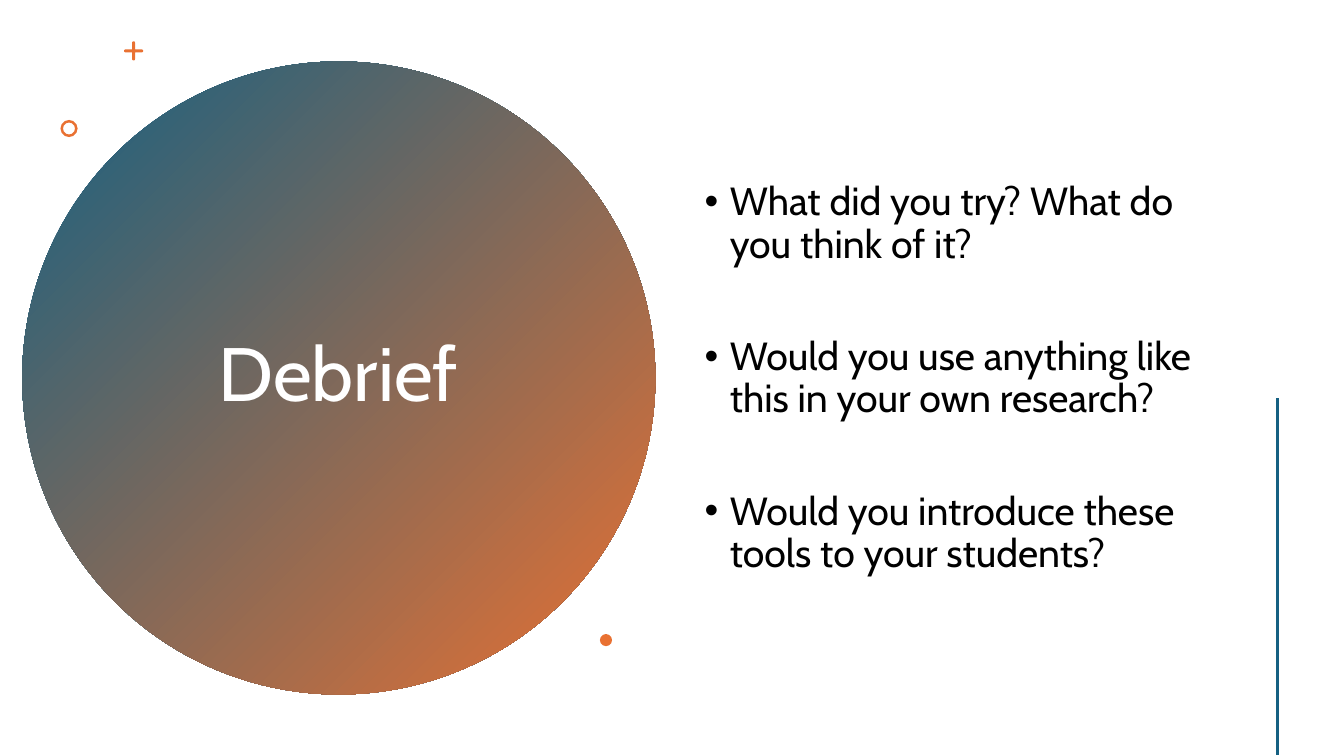
from math import cos, pi, sin

from lxml import etree
from pptx import Presentation
from pptx.dml.color import RGBColor
from pptx.enum.shapes import MSO_CONNECTOR as CONN, MSO_SHAPE as SHAPE
from pptx.enum.text import MSO_ANCHOR as ANCHOR, PP_ALIGN as ALIGN
from pptx.oxml.ns import qn
from pptx.util import Pt

PX = 9144  # EMU per px, 100 px to the inch
COLORS = {"teal": "156082", "orange": "E97132", "white": "FFFFFF", "black": "000000"}
FONT = "Cabin"
QUESTIONS = [
    "What did you try? What do you think of it?",
    "Would you use anything like this in your own research?",
    "Would you introduce these tools to your students?",
]


def rgb(name):
    return RGBColor.from_string(COLORS[name])


def px(*lengths):
    return [n * PX for n in lengths]


def paint(sp, color):
    sp.shadow.inherit = False
    sp.line.fill.background()
    sp.fill.solid()
    sp.fill.fore_color.rgb = rgb(color)


def add_mark(s, kind, box, color="orange"):
    sp = s.shapes.add_shape(kind, *px(*box))
    paint(sp, color)
    return sp


def add_text(s, box, lines, size, color, align):
    tf = s.shapes.add_textbox(*px(*box)).text_frame
    for name, value in {"word_wrap": True, "vertical_anchor": ANCHOR.MIDDLE}.items():
        setattr(tf, name, value)
    for i, line in enumerate(lines):
        p = tf.paragraphs[0] if i == 0 else tf.add_paragraph()
        p.alignment, p.line_spacing = align, 0.9
        r = p.add_run()
        r.text = line
        for name, value in {"name": FONT, "size": Pt(size)}.items():
            setattr(r.font, name, value)
        r.font.color.rgb = rgb(color)
    return tf


def add_plus(s, box):
    """Cross with four round-ended arms, centred in the box."""
    x, y, w, h = px(*box)
    half = 1.4 * PX
    reach = w / 2 - half
    steps = [-pi / 2 + pi * i / 8 for i in range(9)]
    arm = [(half, -half)] + [(reach + half * cos(a), half * sin(a)) for a in steps]
    points = [
        (round(x + w / 2 + u * cos(t) - v * sin(t)), round(y + h / 2 + u * sin(t) + v * cos(t)))
        for t in (k * pi / 2 for k in range(4))
        for u, v in arm
    ]
    fb = s.shapes.build_freeform(*points[0])
    fb.add_line_segments(points[1:], close=True)
    paint(fb.convert_to_shape(), "orange")


def add_title_disc(s, box, title):
    x, y, w, h = box
    # Gradient disc
    disc = add_mark(s, SHAPE.OVAL, box)
    disc.fill.gradient()
    disc.fill.gradient_angle = 315
    for stop, color in zip(disc.fill.gradient_stops, ("teal", "orange")):
        stop.color.rgb = rgb(color)
    # Title
    add_text(s, (x + 114, y + 80, 399, 467), [title], 54, "white", ALIGN.CENTER)
    # Small marks around the disc
    add_plus(s, (x + 101, y - 20, 19, 19))
    ring = add_mark(s, SHAPE.DONUT, (x + 38, y + 58, 17, 17))
    ring.adjustments[0] = 0.15
    add_mark(s, SHAPE.OVAL, (x + 573, y + 568, 12, 12))


def add_questions(s, box, questions):
    tf = add_text(s, box, questions, 28, "black", ALIGN.LEFT)
    for i, p in enumerate(tf.paragraphs):
        p.space_before = Pt(50 if i else 10)
        pPr = p._p.get_or_add_pPr()
        pPr.set("marL", str(25 * PX))
        pPr.set("indent", str(-25 * PX))
        etree.SubElement(pPr, qn("a:buFont"), typeface="Arial")
        etree.SubElement(pPr, qn("a:buChar"), char="•")


def add_side_line(s, box):
    x, y, w, h = box
    line = s.shapes.add_connector(CONN.STRAIGHT, *px(x, y, x + w, y + h))
    line.line.color.rgb = rgb("teal")
    line.line.width = Pt(2)
    etree.SubElement(line._element.spPr, qn("a:effectLst"))


def main():
    prs = Presentation()
    prs.slide_width, prs.slide_height = px(1333, 750)
    s = prs.slides.add_slide(prs.slide_layouts[6])
    add_title_disc(s, (22, 61, 628, 628), "Debrief")
    add_questions(s, (689, 57, 522, 638), QUESTIONS)
    add_side_line(s, (1267, 395, 0, 354))
    prs.save("out.pptx")


if __name__ == "__main__":
    main()
